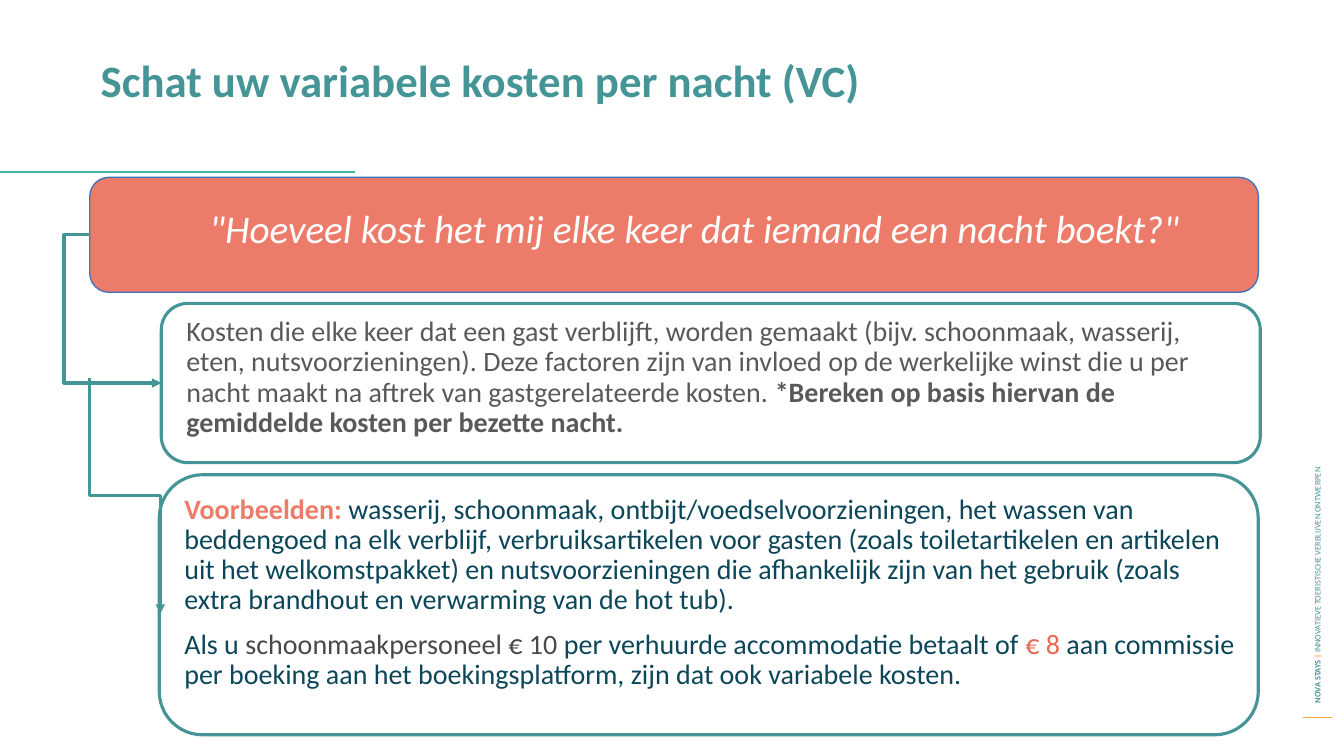
from dataclasses import dataclass

from pptx import Presentation
from pptx import util as u
from pptx.dml.color import RGBColor
from pptx.enum import shapes, text
from pptx.oxml.ns import qn
from lxml import etree

PX = 9144  # 100 px to the inch


@dataclass(frozen=True)
class Theme:
    font: str = "Calibri"
    teal: str = "459597"
    green: str = "3FB5A1"
    coral: str = "EC7C69"
    red: str = "E96751"
    amber: str = "FBA63B"
    blue: str = "4174BA"
    navy: str = "0C4659"
    grey: str = "595959"
    dark: str = "494949"
    white: str = "FFFFFF"
    title: int = 32
    quote: int = 28
    body: int = 20
    footer: int = 6
    thick: float = 2.25


T = Theme()


def rgb(colour):
    return RGBColor.from_string(colour)


def add_text(s, box, paragraphs, size, spacing=0.9, **font):
    """Each paragraph is a list of (text, colour, bold) runs."""
    sp = s.shapes.add_textbox(*(v * PX for v in box))
    tf = sp.text_frame
    tf.word_wrap = True
    for i, runs in enumerate(paragraphs):
        p = tf.add_paragraph() if i else tf.paragraphs[0]
        p.line_spacing = spacing
        if i:
            p.space_before = u.Pt(10)
        p.font.name, p.font.size = T.font, u.Pt(size)
        for name, value in font.items():
            setattr(p.font, name, value)
        for words, colour, bold in runs:
            r = p.add_run()
            r.text = words
            r.font.color.rgb = rgb(colour)
            r.font.bold = bold
    return sp


def add_panel(s, box, line, width, fill=None):
    sp = s.shapes.add_shape(shapes.MSO_SHAPE.FLOWCHART_ALTERNATE_PROCESS,
                            *(v * PX for v in box))
    sp.shadow.inherit = False
    if fill:
        sp.fill.solid()
        sp.fill.fore_color.rgb = rgb(fill)
    else:
        sp.fill.background()
    sp.line.color.rgb = rgb(line)
    sp.line.width = u.Pt(width)


def add_line(s, start, end, colour, width, kind=shapes.MSO_CONNECTOR.STRAIGHT):
    sp = s.shapes.add_connector(kind, *(v * PX for v in (*start, *end)))
    sp.line.color.rgb = rgb(colour)
    sp.line.width = u.Pt(width)
    etree.SubElement(sp._element.spPr, qn("a:effectLst"))
    return sp


def add_elbow_arrow(s, start, end, bend, upright=False):
    """Bend is the share of the first axis at which the line turns.

    An upright arrow leaves and arrives vertically.
    """
    (x1, y1), (x2, y2) = start, end
    if upright:
        cx, cy = (x1 + x2) // 2, (y1 + y2) // 2
        half_w, half_h = (y2 - y1) // 2, (x2 - x1) // 2
        start, end = (cx + half_w, cy - half_h), (cx - half_w, cy + half_h)
    sp = add_line(s, start, end, T.teal, T.thick, shapes.MSO_CONNECTOR.ELBOW)
    spPr = sp._element.spPr
    if upright:
        spPr.find(qn("a:xfrm")).set("rot", str(270 * 60000))
    guides = spPr.find(qn("a:prstGeom")).get_or_add_avLst()
    etree.SubElement(guides, qn("a:gd"), name="adj1",
                     fmla=f"val {round(bend * 100000)}")
    etree.SubElement(spPr.find(qn("a:ln")), qn("a:tailEnd"), type="triangle")


def add_footer(s, box):
    """Text that reads upwards along the right edge, above a short rule."""
    x, y, w, h = box
    add_line(s, (x, y + h), (x + w, y + h), T.amber, 0.75)
    length, thickness = 577, 20
    sp = add_text(s, (x + w // 2 - length // 2, y + (h - thickness) // 2 - 4,
                      length, thickness),
                  [[("NOVA STAYS ", T.teal, True), ("| ", T.amber, True),
                    ("INNOVATIEVE TOERISTISCHE VERBLIJVEN ONTWERPEN", T.teal, False)]],
                  T.footer, spacing=1.0)
    sp.text_frame.vertical_anchor = text.MSO_ANCHOR.MIDDLE
    sp.rotation = 270


def add_header(s, box):
    x, y, w, h = box
    add_text(s, (x, y, w, 88),
             [[("Schat uw variabele kosten per nacht (VC)", T.teal, True)]], T.title)
    add_line(s, (0, y + h), (352, y + h), T.green, 1.5)


def add_question(s, box):
    x, y, w, h = box
    add_panel(s, box, T.blue, 1, T.coral)
    sp = add_text(s, (x + 20, y + 27, w, 88),
                  [[('"Hoeveel kost het mij elke keer dat iemand een nacht boekt?"',
                     T.white, False)]], T.quote, italic=True)
    sp.text_frame.paragraphs[0].alignment = text.PP_ALIGN.CENTER


def add_answer(s, box, top, paragraphs):
    """Outlined panel whose text starts at top, measured from its upper edge."""
    x, y, w, h = box
    add_text(s, (x + 15, y + top, 1063, 88), paragraphs, T.body)
    add_panel(s, box, T.teal, T.thick)


DEFINITION = [[
    ("Kosten die elke keer dat een gast verblijft, worden gemaakt (bijv. schoonmaak, "
     "wasserij, eten, nutsvoorzieningen). Deze factoren zijn van invloed op de werkelijke "
     "winst die u per nacht maakt na aftrek van gastgerelateerde kosten. ", T.grey, False),
    ("*Bereken op basis hiervan de gemiddelde kosten per bezette nacht.", T.grey, True),
]]
EXAMPLES = [
    [("Voorbeelden: ", T.coral, True),
     ("wasserij, schoonmaak, ontbijt/voedselvoorzieningen, het wassen van beddengoed na "
      "elk verblijf, verbruiksartikelen voor gasten (zoals toiletartikelen en artikelen "
      "uit het welkomstpakket) en nutsvoorzieningen die afhankelijk zijn van het gebruik "
      "(zoals extra brandhout en verwarming van de hot tub).", T.navy, False)],
    [("Als u ", T.navy, False),
     ("schoonmaakpersoneel € 10 ", T.dark, False),
     ("per verhuurde accommodatie betaalt of ", T.navy, False),
     ("€ 8 ", T.red, False),
     ("aan commissie per boeking aan het boekingsplatform, zijn dat ook variabele kosten.",
      T.navy, False)],
]


def add_cost_slide(prs):
    s = prs.slides.add_slide(prs.slide_layouts[6])
    question = (89, 176, 1159, 114)
    definition = (160, 301, 1090, 158)
    examples = (158, 471, 1090, 258)
    add_footer(s, (1292, 134, 29, 578))
    add_header(s, (90, 53, 1161, 118))
    add_question(s, question)
    add_answer(s, definition, 9, DEFINITION)
    add_answer(s, examples, 15, EXAMPLES)
    left = question[0]
    middle = definition[1] + definition[3] // 2
    add_elbow_arrow(s, (left, question[1] + question[3] // 2),
                    (definition[0], middle), -0.36)
    add_elbow_arrow(s, (left, middle - 5), (definition[0], 610), 0.5, upright=True)


def main():
    prs = Presentation()
    prs.slide_width, prs.slide_height = 1333 * PX, 750 * PX
    add_cost_slide(prs)
    prs.save("out.pptx")


if __name__ == "__main__":
    main()
